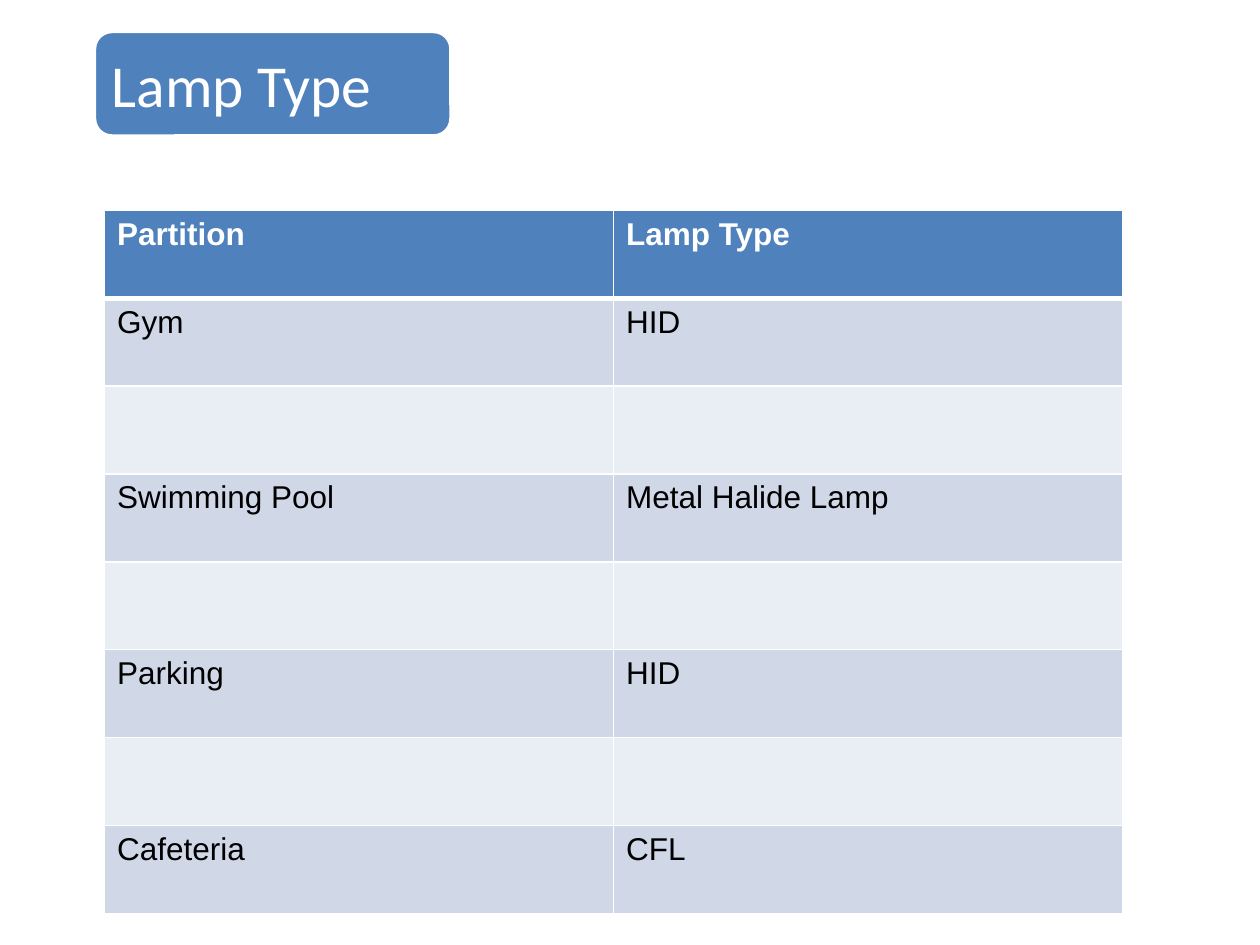
from dataclasses import dataclass

from lxml.etree import SubElement
from pptx import Presentation
from pptx.dml.color import RGBColor
from pptx.enum.shapes import MSO_SHAPE
from pptx.enum.text import MSO_ANCHOR, PP_ALIGN
from pptx.oxml.ns import qn
from pptx.util import Inches, Pt


@dataclass(frozen=True)
class Theme:
    accent: str = "4F81BD"
    dark_band: str = "D0D8E8"
    light_band: str = "E9EDF4"
    white: str = "FFFFFF"
    black: str = "000000"
    title_font: str = "Calibri"
    table_font: str = "Arial"
    title_size: int = 34
    table_size: int = 18


THEME = Theme()
HEADER = ("Partition", "Lamp Type")
LAMPS = [("Gym", "HID"), ("Swimming Pool", "Metal Halide Lamp"),
         ("Parking", "HID"), ("Cafeteria", "CFL")]


def set_font(paragraph, name, size, color, bold=False):
    font = paragraph.font
    font.name, font.size, font.bold = name, Pt(size), bold
    font.color.rgb = RGBColor.from_string(color)


def set_fill(target, color):
    target.fill.solid()
    target.fill.fore_color.rgb = RGBColor.from_string(color)


def set_borders(cell, **widths):
    """Draw white borders; widths are points keyed lnL, lnR, lnT, lnB."""
    properties = cell._tc.get_or_add_tcPr()
    for position, (side, width) in enumerate(widths.items()):
        line = SubElement(properties, qn(f"a:{side}"), w=str(Pt(width)))
        fill = SubElement(line, qn("a:solidFill"))
        SubElement(fill, qn("a:srgbClr"), val=THEME.white)
        properties.insert(position, line)


def add_title(slide, text, left, top, width, height):
    shape = slide.shapes.add_shape(MSO_SHAPE.ROUNDED_RECTANGLE, left, top, width, height)
    shape.shadow.inherit = False
    set_fill(shape, THEME.accent)
    shape.line.color.rgb = RGBColor.from_string(THEME.white)
    shape.line.width = Pt(2)
    frame = shape.text_frame
    frame.word_wrap = True
    frame.vertical_anchor = MSO_ANCHOR.MIDDLE
    paragraph = frame.paragraphs[0]
    paragraph.text = text
    paragraph.alignment = PP_ALIGN.LEFT
    set_font(paragraph, THEME.title_font, THEME.title_size, THEME.white)


def add_lamp_table(slide, left, top, width, height):
    """Add the header and lamp rows, with an empty light row between lamps."""
    rows = [HEADER]
    for lamp in LAMPS:
        rows += [lamp, ("", "")]
    rows.pop()
    table = slide.shapes.add_table(len(rows), len(HEADER), left, top, width, height).table
    for row_index, row in enumerate(rows):
        is_header = row_index == 0
        band = THEME.dark_band if row_index % 2 else THEME.light_band
        for column_index, text in enumerate(row):
            cell = table.cell(row_index, column_index)
            cell.text = text
            set_fill(cell, THEME.accent if is_header else band)
            set_font(cell.text_frame.paragraphs[0], THEME.table_font, THEME.table_size,
                     THEME.white if is_header else THEME.black, is_header)
            set_borders(cell, lnL=1, lnR=1, lnT=3 if row_index == 1 else 1,
                        lnB=3 if is_header else 1)


def main():
    presentation = Presentation()
    presentation.slide_width, presentation.slide_height = Inches(10), Inches(7.5)
    slide = presentation.slides.add_slide(presentation.slide_layouts[6])
    add_lamp_table(slide, Inches(0.83), Inches(1.67), Inches(8.08), Inches(5.58))
    add_title(slide, "Lamp Type", Inches(0.75), Inches(0.25), Inches(2.83), Inches(0.83))
    presentation.save("out.pptx")


if __name__ == "__main__":
    main()
